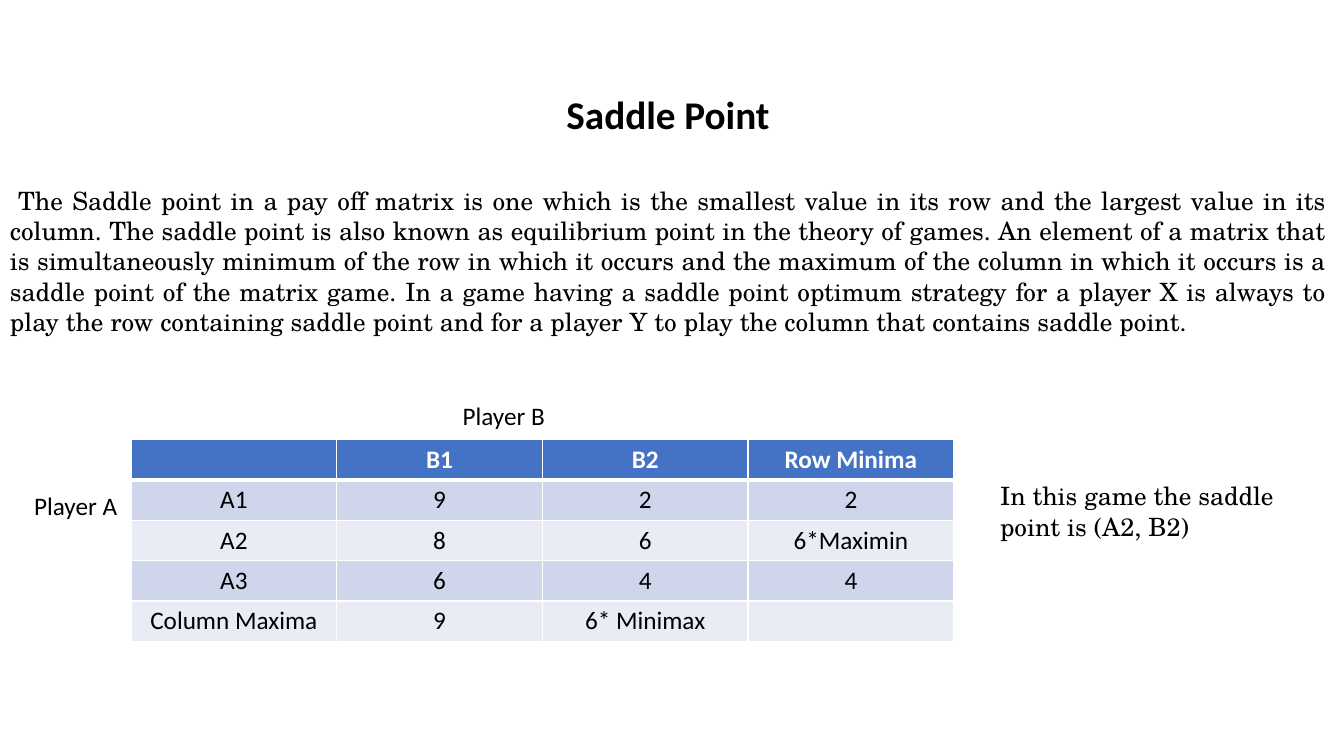
"""Build a slide that explains the saddle point of a pay off matrix."""
from lxml.etree import SubElement
from pptx import Presentation
from pptx.dml.color import RGBColor
from pptx.enum.text import MSO_AUTO_SIZE as AutoSize, PP_ALIGN as Align
from pptx.oxml.ns import qn
from pptx.util import Inches, Pt

BLACK = RGBColor(0x00, 0x00, 0x00)
WHITE = RGBColor(0xFF, 0xFF, 0xFF)
HEADER_BLUE = RGBColor(0x44, 0x72, 0xC4)
BAND_DARK = RGBColor(0xCF, 0xD5, 0xEA)
BAND_LIGHT = RGBColor(0xE9, 0xEB, 0xF5)
SANS = "Calibri"
SERIF = "TeX Gyre Schola"

TITLE = "Saddle Point"
DEFINITION = (
    "The Saddle point in a pay off matrix is one which is the smallest value in its row "
    "and the largest value in its column. The saddle point is also known as equilibrium "
    "point in the theory of games. An element of a matrix that is simultaneously minimum "
    "of the row in which it occurs and the maximum of the column in which it occurs is a "
    "saddle point of the matrix game. In a game having a saddle point optimum strategy for "
    "a player X is always to play the row containing saddle point and for a player Y to "
    "play the column that contains saddle point."
)
PAYOFFS = [
    ("", "B1", "B2", "Row Minima"),
    ("A1", "9", "2", "2"),
    ("A2", "8", "6", "6*Maximin"),
    ("A3", "6", "4", "4"),
    ("Column Maxima", "9", "6* Minimax", ""),
]
NOTES = [
    ("Player A", (0.24, 4.82, 1.03, 0.4), SANS, False),
    ("Player B", (4.49, 3.92, 1.03, 0.4), SANS, False),
    ("In this game the saddle point is (A2, B2)", (9.82, 4.72, 3.42, 0.71), SERIF, True),
]
TABLE_LEFT, TABLE_TOP = 1.3, 4.36
COLUMN_WIDTH, ROW_HEIGHT = 2.04, 0.4


def write(para, text, size=18, font=SANS, color=BLACK, bold=False, align=Align.LEFT):
    para.alignment = align
    span = para.add_run()
    span.text = text
    span.font.size = Pt(size)
    span.font.name = font
    span.font.bold = bold
    span.font.color.rgb = color


def add_box(page, place, wrap=True):
    box = page.shapes.add_textbox(*map(Inches, place))
    box.text_frame.word_wrap = wrap
    box.text_frame.auto_size = AutoSize.SHAPE_TO_FIT_TEXT
    return box.text_frame


def add_borders(cell, bottom, top):
    properties = cell._tc.get_or_add_tcPr()
    widths = (("a:lnL", 1), ("a:lnR", 1), ("a:lnT", top), ("a:lnB", bottom))
    for position, (side, width) in enumerate(widths):
        line = SubElement(properties, qn(side), w=str(Pt(width)))
        fill = SubElement(line, qn("a:solidFill"))
        SubElement(fill, qn("a:srgbClr"), val=str(WHITE))
        properties.insert(position, line)


def add_payoff_table(page):
    rows, columns = len(PAYOFFS), len(PAYOFFS[0])
    table = page.shapes.add_table(
        rows, columns, Inches(TABLE_LEFT), Inches(TABLE_TOP),
        Inches(columns * COLUMN_WIDTH), Inches(rows * ROW_HEIGHT)).table
    for row, values in enumerate(PAYOFFS):
        header = row == 0
        band = HEADER_BLUE if header else BAND_DARK if row % 2 else BAND_LIGHT
        for column, value in enumerate(values):
            cell = table.cell(row, column)
            cell.fill.solid()
            cell.fill.fore_color.rgb = band
            add_borders(cell, bottom=3 if header else 1, top=3 if row == 1 else 1)
            if value:
                write(cell.text_frame.paragraphs[0], value, bold=header,
                      color=WHITE if header else BLACK, align=Align.CENTER)


def main():
    deck = Presentation()
    deck.slide_width, deck.slide_height = Inches(13.33), Inches(7.5)
    page = deck.slides.add_slide(deck.slide_layouts[6])

    frame = add_box(page, (0, 0.85, 13.25, 2.56))
    write(frame.paragraphs[0], TITLE, size=28, bold=True, align=Align.CENTER)
    body = frame.add_paragraph()
    body.space_before = Pt(34)
    write(body, " ", align=Align.JUSTIFY)
    write(body, DEFINITION, font=SERIF, align=Align.JUSTIFY)

    add_payoff_table(page)
    for text, place, font, wrap in NOTES:
        write(add_box(page, place, wrap).paragraphs[0], text, font=font)
    deck.save("out.pptx")


if __name__ == "__main__":
    main()
